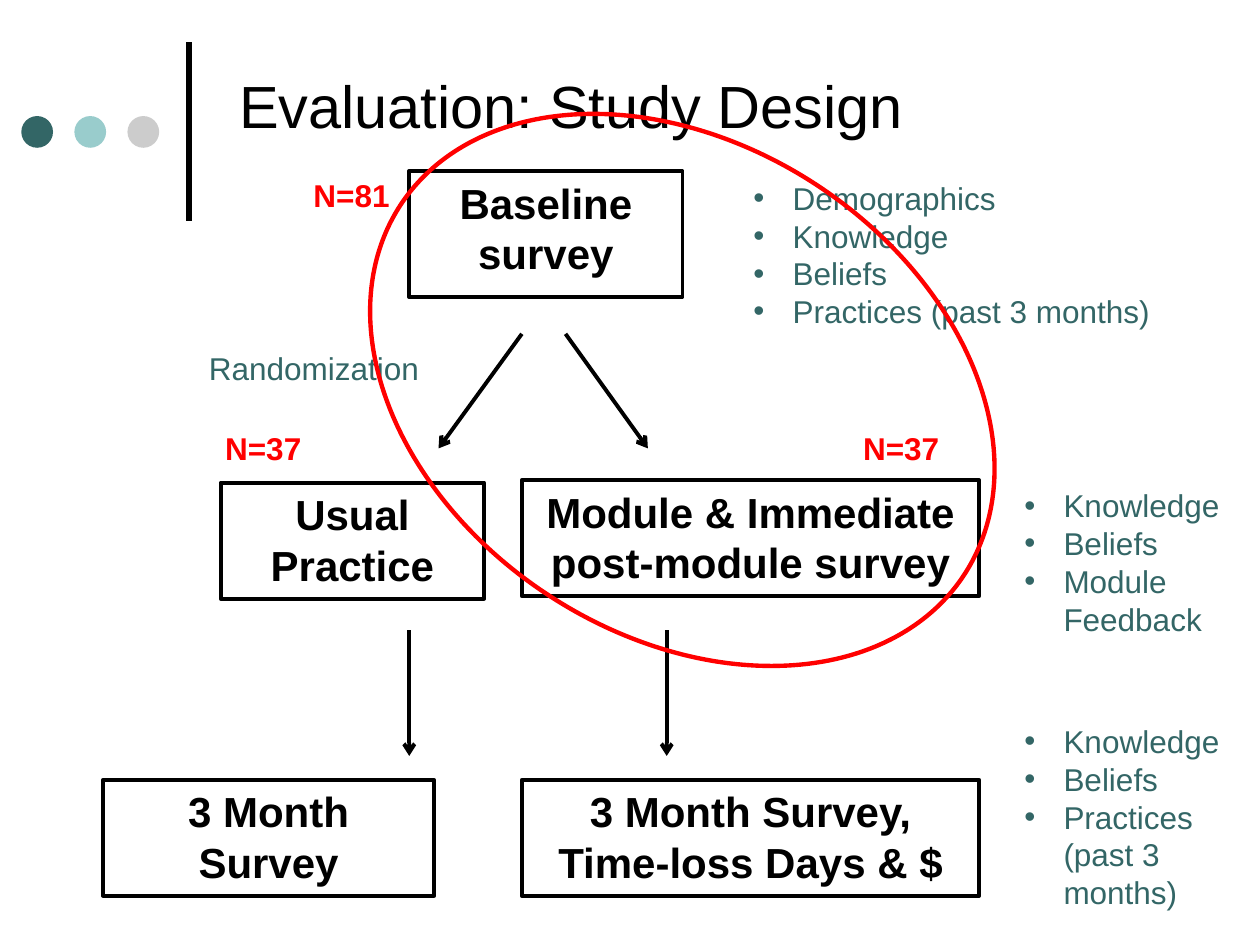
from lxml import etree
from pptx import Presentation
from pptx.dml.color import RGBColor
from pptx.enum.shapes import MSO_CONNECTOR, MSO_SHAPE
from pptx.enum.text import MSO_ANCHOR, MSO_AUTO_SIZE, PP_ALIGN
from pptx.oxml.ns import qn
from pptx.util import Cm, Pt

RECTANGLE = MSO_SHAPE.RECTANGLE
OVAL = MSO_SHAPE.OVAL
STRAIGHT = MSO_CONNECTOR.STRAIGHT
TOP, MIDDLE = MSO_ANCHOR.TOP, MSO_ANCHOR.MIDDLE
LEFT, CENTER = PP_ALIGN.LEFT, PP_ALIGN.CENTER
GROW = MSO_AUTO_SIZE.SHAPE_TO_FIT_TEXT

BLACK, RED, TEAL = "000000", "FF0000", "336666"
DOT_COLOURS = [TEAL, "99CCCC", "CCCCCC"]
FONT = "Arial"


def colour(hex_string):
    return RGBColor.from_string(hex_string)


def add_text(paragraph, words, size, hex_string, bold=False):
    run = paragraph.add_run()
    run.text = words
    run.font.name = FONT
    run.font.size = Pt(size)
    run.font.bold = bold
    run.font.color.rgb = colour(hex_string)


def add_line(slide, x1, y1, x2, y2, weight, arrow=False):
    line = slide.shapes.add_connector(STRAIGHT, Cm(x1), Cm(y1), Cm(x2), Cm(y2))
    line.line.color.rgb = colour(BLACK)
    line.line.width = Pt(weight)
    if arrow:
        etree.SubElement(line.line._get_or_add_ln(), qn("a:tailEnd"), type="arrow")
    etree.SubElement(line._element.spPr, qn("a:effectLst"))


def add_outline(slide, preset, left, top, width, height, hex_string, weight):
    outline = slide.shapes.add_shape(preset, Cm(left), Cm(top), Cm(width), Cm(height))
    outline.shadow.inherit = False
    outline.fill.background()
    outline.line.color.rgb = colour(hex_string)
    outline.line.width = Pt(weight)
    return outline


def add_frame(slide, left, top, width, height, wrap=True):
    frame = slide.shapes.add_textbox(Cm(left), Cm(top), Cm(width), Cm(height)).text_frame
    frame.word_wrap = wrap
    return frame


def add_ornament(slide, left, top):
    diameter, step = 0.64, 1.07
    add_line(slide, left + 3.38, top + 3.61, left + 3.38, top, 3)
    for index, dot_colour in enumerate(DOT_COLOURS):
        dot = slide.shapes.add_shape(OVAL, Cm(left + index * step), Cm(top + 1.5),
                                     Cm(diameter), Cm(diameter))
        dot.shadow.inherit = False
        dot.fill.solid()
        dot.fill.fore_color.rgb = colour(dot_colour)
        dot.line.fill.background()


def add_title(slide, left, top, width, height):
    frame = add_frame(slide, left, top, width, height)
    frame.vertical_anchor = MIDDLE
    add_text(frame.paragraphs[0], "Evaluation: Study Design", 34, BLACK)


def add_step(slide, left, top, width, height, words):
    frame = add_outline(slide, RECTANGLE, left, top, width, height, BLACK, 2.25).text_frame
    frame.word_wrap = True
    frame.vertical_anchor = TOP
    frame.paragraphs[0].alignment = CENTER
    add_text(frame.paragraphs[0], words, 24, BLACK, bold=True)


def add_label(slide, left, top, width, words, hex_string, bold):
    frame = add_frame(slide, left, top, width, 1.02, wrap=False)
    frame.auto_size = GROW
    add_text(frame.paragraphs[0], words, 18, hex_string, bold)


def add_flow(slide, left, top):
    right_arm, last_row, row_height = 8.44, 12.27, 2.34
    steps = [
        (6.17, 0, 5.51, 2.54, "Baseline survey"),
        (2.37, 6.28, 5.31, row_height, "Usual Practice"),
        (right_arm, 6.23, 9.22, row_height, "Module & Immediate post-module survey"),
        (0, last_row, 6.67, row_height, "3 Month Survey"),
        (right_arm, last_row, 9.22, row_height, "3 Month Survey, Time-loss Days & $"),
    ]
    for x, y, width, height, words in steps:
        add_step(slide, left + x, top + y, width, height, words)

    arrows = [
        (8.44, 3.28, 6.76, 5.59),
        (9.32, 3.28, 10.98, 5.59),
        (6.17, 9.25, 6.17, 11.79),
        (11.36, 9.25, 11.36, 11.79),
    ]
    for x1, y1, x2, y2 in arrows:
        add_line(slide, left + x1, top + y1, left + x2, top + y2, 2.25, arrow=True)

    add_label(slide, left + 1.88, top + 3.46, 4.8, "Randomization", TEAL, False)
    for x, y, count in [(3.99, -0.02, 81), (2.21, 5.08, 37), (15.07, 5.08, 37)]:
        add_label(slide, left + x, top + y, 2.06, f"N={count}", RED, True)


def add_measures(slide, left, top, width, height, measures, wrap=True):
    frame = add_frame(slide, left, top, width, height, wrap)
    frame.auto_size = GROW
    for index, measure in enumerate(measures):
        paragraph = frame.add_paragraph() if index else frame.paragraphs[0]
        paragraph.alignment = LEFT
        properties = paragraph._p.get_or_add_pPr()
        properties.set("marL", str(Cm(0.79)))
        properties.set("indent", str(-Cm(0.79)))
        etree.SubElement(properties, qn("a:buFont"), typeface=FONT)
        etree.SubElement(properties, qn("a:buChar"), char="•")
        add_text(paragraph, measure, 18, TEAL)


def add_highlight(slide, left, top, width, height):
    ring = add_outline(slide, OVAL, left, top, width, height, RED, 2.5)
    ring.rotation = 33.3


def main():
    presentation = Presentation()
    presentation.slide_width = Cm(25.4)
    presentation.slide_height = Cm(19.05)
    slide = presentation.slides.add_slide(presentation.slide_layouts[6])

    add_ornament(slide, 0.43, 0.84)
    add_title(slide, 4.57, 0, 19.48, 4.24)
    add_flow(slide, 2.08, 3.45)
    practices = "Practices (past 3 months)"
    add_measures(slide, 14.94, 3.48, 8.59, 3.33,
                 ["Demographics", "Knowledge", "Beliefs", practices], wrap=False)
    add_measures(slide, 20.4, 9.68, 4.5, 3.33, ["Knowledge", "Beliefs", "Module Feedback"])
    add_measures(slide, 20.4, 14.43, 4.5, 4.11, ["Knowledge", "Beliefs", practices])
    add_highlight(slide, 6.96, 2.92, 13.59, 9.88)

    presentation.save("out.pptx")


if __name__ == "__main__":
    main()
